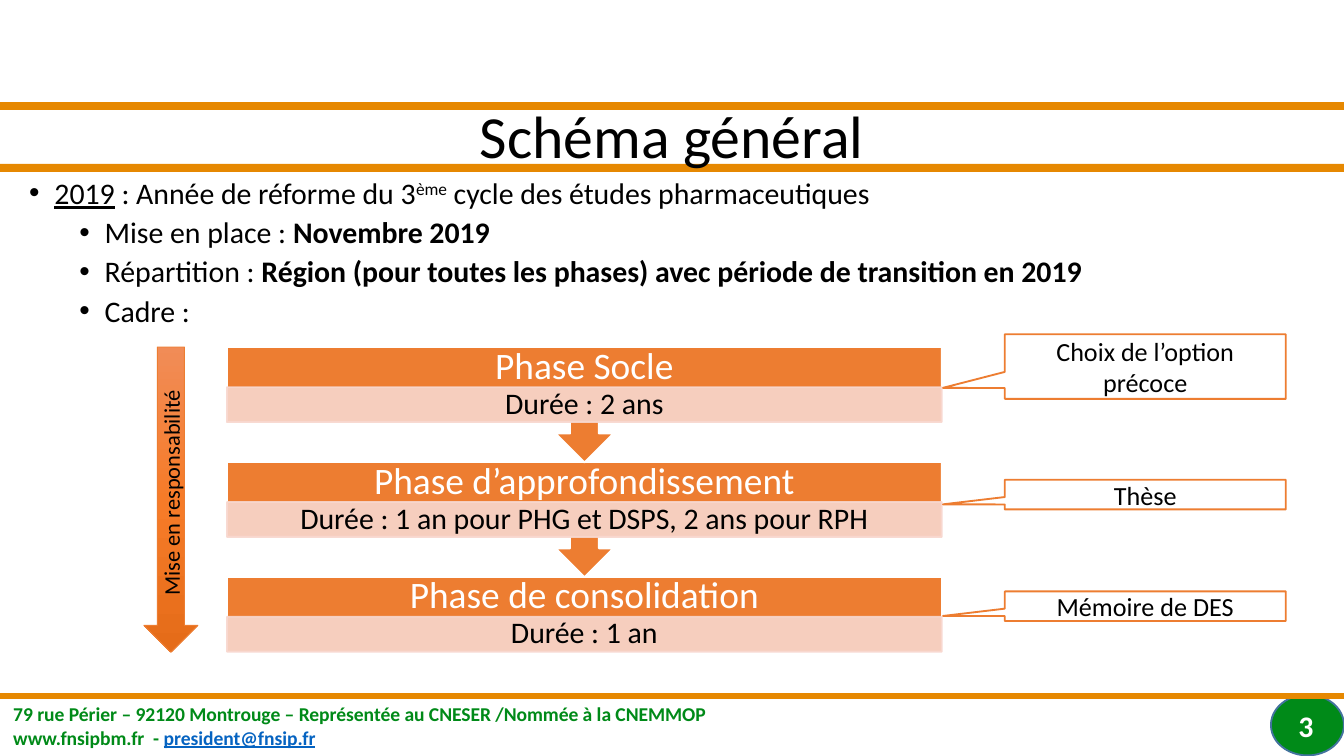
import copy

import pptx
import pptx.dml.color
import pptx.enum.shapes
import pptx.enum.text
import pptx.oxml
import pptx.oxml.ns
import pptx.util

Cm, Pt = pptx.util.Cm, pptx.util.Pt
RGB = pptx.dml.color.RGBColor.from_string
SHAPE = pptx.enum.shapes.MSO_SHAPE
ALIGN = pptx.enum.text.PP_ALIGN
ANCHOR = pptx.enum.text.MSO_ANCHOR
qn = pptx.oxml.ns.qn

COLORS = {
    "bar": "E68801", "green": "008A18", "badge_line": "43739E", "link": "0563C1",
    "orange": "ED7D31", "pale": "F8D7CE", "white": "FFFFFF", "black": "000000",
    "grad_top": "F18C57", "grad_mid": "F67B28", "grad_end": "E56C19",
}

prs = pptx.Presentation()
prs.slide_width, prs.slide_height = Cm(25.4), Cm(14.29)
s = prs.slides.add_slide(prs.slide_layouts[6])


def add_box(kind, x, y, w, h, fill=None, line=None, width=1):
    """Add a preset shape in cm, or a text box when kind is None."""
    place = Cm(x), Cm(y), Cm(w), Cm(h)
    if kind is None:
        return s.shapes.add_textbox(*place)
    sp = s.shapes.add_shape(kind, *place)
    sp.shadow.inherit = False
    if fill:
        sp.fill.solid()
        sp.fill.fore_color.rgb = RGB(COLORS[fill])
    if line:
        sp.line.color.rgb = RGB(COLORS[line])
        sp.line.width = Pt(width)
    else:
        sp.line.fill.background()
    return sp


def write(sp, paragraphs, size=16, color="black", bold=False, align=ALIGN.CENTER,
          anchor=ANCHOR.MIDDLE, spacing=None, margins=None, bullets=False):
    """Fill a shape; each paragraph is a string or a list of (text, run format)."""
    tf = sp.text_frame
    tf.word_wrap = True
    tf.vertical_anchor = anchor
    if margins:
        tf.margin_left = tf.margin_right = Cm(margins[0])
        tf.margin_top = tf.margin_bottom = Cm(margins[1])
    for i, runs in enumerate(paragraphs):
        p = tf.paragraphs[0] if i == 0 else tf.add_paragraph()
        if bullets:
            p.level = min(i, 1)
            pPr = p._p.get_or_add_pPr()
            pPr.set("marL", str(Cm(0.48 + 0.95 * p.level)))
            pPr.set("indent", str(-Cm(0.48)))
            pPr.append(pptx.oxml.parse_xml(
                '<a:buFont xmlns:a="http://schemas.openxmlformats.org/drawingml/2006/main"'
                ' typeface="Arial"/>'))
            pPr.append(pptx.oxml.parse_xml(
                '<a:buChar xmlns:a="http://schemas.openxmlformats.org/drawingml/2006/main"'
                ' char="•"/>'))
            if i:
                p.space_before = Pt(3.8)
        p.alignment = align
        if spacing:
            p.line_spacing = spacing
        for text, style in [(runs, {})] if isinstance(runs, str) else runs:
            r = p.add_run()
            r.text = text
            r.font.name = "Calibri"
            r.font.size = Pt(size)
            r.font.bold = style.get("bold", bold)
            r.font.underline = style.get("underline", False)
            r.font.color.rgb = RGB(COLORS[style.get("color", color)])
            if "baseline" in style:
                r.font._element.set("baseline", str(style["baseline"]))


# Title band
for y in (1.93, 3.1):
    add_box(SHAPE.RECTANGLE, 0, y, 25.4, 0.15, "bar")
write(add_box(None, 0, 2.13, 25.4, 1), ["Schéma général"], size=32, spacing=0.9)

# Footer
add_box(SHAPE.OVAL, 24.02, 13.13, 1.38, 1.15, "green", "badge_line")
write(add_box(SHAPE.RECTANGLE, 0, 13.15, 14, 1.14, "white"), [
    "79 rue Périer – 92120 Montrouge – Représentée au CNESER /Nommée à la CNEMMOP",
    [("www.fnsipbm.fr  - ", {}),
     ("president@fnsip.fr", {"color": "link", "underline": True})],
], size=10.5, color="green", bold=True, align=ALIGN.LEFT, anchor=ANCHOR.TOP)
rule = s.shapes.add_connector(pptx.enum.shapes.MSO_CONNECTOR.STRAIGHT,
                              0, Cm(13.16), Cm(25.4), Cm(13.16))
rule.line.color.rgb = RGB(COLORS["bar"])
rule.line.width = Pt(3)
rule._element.spPr.append(pptx.oxml.parse_xml(
    '<a:effectLst xmlns:a="http://schemas.openxmlformats.org/drawingml/2006/main"/>'))
write(add_box(None, 24.02, 13.28, 1.32, 0.86), ["3"], color="white", bold=True)

# Key facts
write(add_box(None, 0.3, 3.25, 23.72, 8.46), [
    [("2019", {"underline": True}), (" : Année de réforme du 3", {}),
     ("ème", {"baseline": 30000}), (" cycle des études pharmaceutiques", {})],
    [("Mise en place : ", {}), ("Novembre 2019", {"bold": True})],
    [("Répartition : ", {}),
     ("Région (pour toutes les phases) avec période de transition en 2019", {"bold": True})],
    "Cadre :",
], align=ALIGN.JUSTIFY, anchor=ANCHOR.TOP, spacing=0.9, bullets=True)

# Phases, drawn from the last to the first so that each arrow lies over the next block
phases = [
    ("Phase Socle", "Durée : 2 ans"),
    ("Phase d’approfondissement", "Durée : 1 an pour PHG et DSPS, 2 ans pour RPH"),
    ("Phase de consolidation", "Durée : 1 an"),
]
left, width = 4.29, 13.51
for i, (name, duration) in reversed(list(enumerate(phases))):
    top = 6.56 + 2.17 * i
    if i == len(phases) - 1:
        add_box(SHAPE.RECTANGLE, left, top, width, 1.42, "orange", "white")
    else:
        block = add_box(SHAPE.UP_ARROW_CALLOUT, left, top, width, 2.18, "orange", "white")
        block.rotation = 180
    write(add_box(None, left, top, width, 0.76), [name], size=20, color="white",
          spacing=0.9, margins=(0.4, 0.4))
    strip = add_box(SHAPE.RECTANGLE, left, top + 0.76, width, 0.66, "pale", "pale")
    for clr in strip._element.spPr.iter(qn("a:srgbClr")):
        clr.append(pptx.oxml.parse_xml(
            '<a:alpha xmlns:a="http://schemas.openxmlformats.org/drawingml/2006/main"'
            ' val="90000"/>'))
    write(strip, [duration], spacing=0.9, margins=(0.3, 0.05))

# Responsibility arrow
arrow = add_box(SHAPE.DOWN_ARROW, 2.72, 6.56, 1.02, 5.77, line="orange", width=0.5)
arrow.fill.gradient()
arrow.fill.gradient_angle = 270
stops = arrow._element.spPr.find(".//" + qn("a:gsLst"))
stops.insert(1, copy.deepcopy(stops[0]))
for stop, position, shade in zip(arrow.fill.gradient_stops, (0, 0.5, 1),
                                 ("grad_top", "grad_mid", "grad_end")):
    stop.position = position
    stop.color.rgb = RGB(COLORS[shade])
write(arrow, ["Mise en responsabilité"], size=12)
arrow.text_frame._txBody.bodyPr.set("vert", "vert270")

# Callouts
for text, y, h in [("Choix de l’option précoce", 6.32, 1.22),
                   ("Thèse", 9.07, 0.56),
                   ("Mémoire de DES", 11.18, 0.56)]:
    note = add_box(SHAPE.RECTANGULAR_CALLOUT, 18.99, y, 5.31, h, "white", "orange")
    note.adjustments[0], note.adjustments[1] = -0.72, 0.33
    write(note, [text], size=14)

prs.save("out.pptx")
